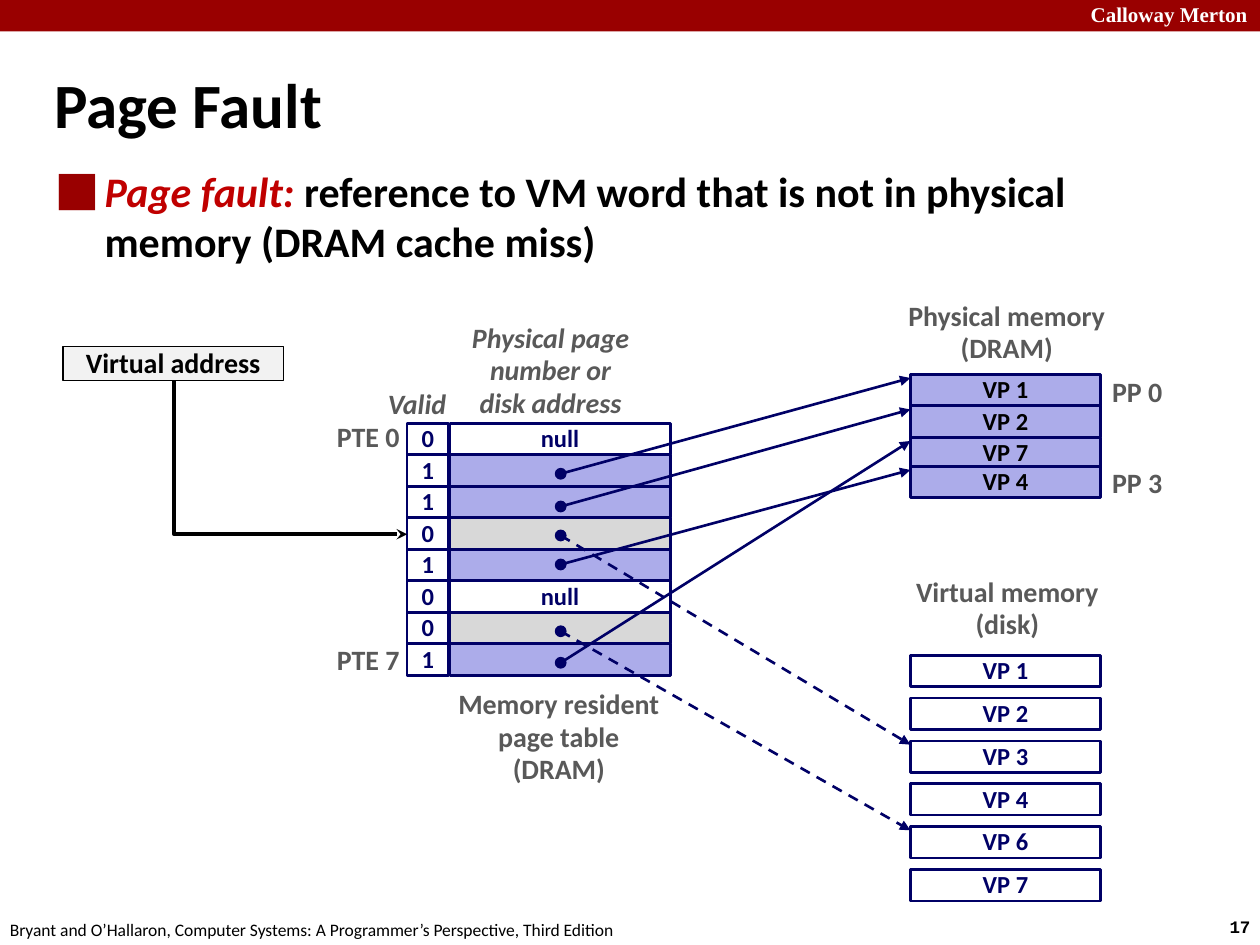
from dataclasses import dataclass

from lxml.etree import SubElement
from pptx import Presentation
from pptx.dml.color import RGBColor
from pptx.enum.dml import MSO_LINE
from pptx.enum.shapes import MSO_CONNECTOR, MSO_SHAPE
from pptx.enum.text import MSO_ANCHOR, MSO_AUTO_SIZE, PP_ALIGN
from pptx.oxml.ns import qn
from pptx.util import Inches, Pt

COLUMNS, ROWS = 40, 30
LEFT, CENTER, RIGHT = PP_ALIGN.LEFT, PP_ALIGN.CENTER, PP_ALIGN.RIGHT
TOP, MIDDLE = MSO_ANCHOR.TOP, MSO_ANCHOR.MIDDLE


@dataclass(frozen=True)
class Theme:
    banner: str = "990000"
    accent: str = "C00000"
    ink: str = "000000"
    navy: str = "000066"
    label: str = "595959"
    cached: str = "ACACEA"
    uncached: str = "D8D8D8"
    box: str = "F2F2F2"
    white: str = "FFFFFF"
    font: str = "Calibri"
    title_size: int = 36
    body_size: int = 24
    label_size: int = 16
    cell_size: int = 14
    header_size: int = 12
    footer_size: int = 10


class SlideBuilder:
    """Draws on one slide; positions are grid columns and rows."""

    def __init__(self, presentation, theme):
        self.theme = theme
        self.slide = presentation.slides.add_slide(presentation.slide_layouts[1])
        self.column = presentation.slide_width / COLUMNS
        self.row = presentation.slide_height / ROWS

    def place(self, *lengths):
        units = (self.column, self.row) * 2
        return [round(length * unit) for length, unit in zip(lengths, units)]

    def add_run(self, paragraph, text, size, color, **formats):
        run = paragraph.add_run()
        run.text = text
        values = {"name": self.theme.font, "bold": True, "size": Pt(size)} | formats
        for name, value in values.items():
            setattr(run.font, name, value)
        run.font.color.rgb = RGBColor.from_string(color)

    def add_lines(self, shape, lines, size, color, align=CENTER, anchor=MIDDLE, **formats):
        frame = shape.text_frame
        margin = 0 if align == CENTER else Inches(0.1)
        values = {"word_wrap": True, "vertical_anchor": anchor,
                  "margin_left": margin, "margin_right": margin}
        for name, value in values.items():
            setattr(frame, name, value)
        for index, line in enumerate(lines):
            paragraph = frame.add_paragraph() if index else frame.paragraphs[0]
            paragraph.alignment = align
            paragraph.line_spacing = 0.98
            self.add_run(paragraph, line, size, color, **formats)

    def label(self, area, *lines, size=None, color=None, **options):
        shape = self.slide.shapes.add_textbox(*self.place(*area))
        self.add_lines(shape, lines, size or self.theme.label_size,
                       color or self.theme.label, **options)

    def shape(self, area, fill, line=None, width=1.5, kind=MSO_SHAPE.RECTANGLE):
        shape = self.slide.shapes.add_shape(kind, *self.place(*area))
        shape.shadow.inherit = False
        shape.fill.solid()
        shape.fill.fore_color.rgb = RGBColor.from_string(fill)
        if line:
            shape.line.color.rgb = RGBColor.from_string(line)
            shape.line.width = Pt(width)
        else:
            shape.line.fill.background()
        return shape

    def cell(self, area, text, fill, color=None):
        shape = self.shape(area, fill, self.theme.navy)
        if text:
            self.add_lines(shape, [text], self.theme.cell_size, color or self.theme.navy)

    def dot(self, column, row):
        self.shape((column - 0.16, row - 0.16, 0.32, 0.32), self.theme.navy,
                   self.theme.navy, 1, MSO_SHAPE.OVAL)

    def arrow(self, start, end, color, width=1.5, head="triangle", dashed=False):
        connector = self.slide.shapes.add_connector(
            MSO_CONNECTOR.STRAIGHT, *self.place(*start, *end))
        connector.line.color.rgb = RGBColor.from_string(color)
        connector.line.width = Pt(width)
        if dashed:
            connector.line.dash_style = MSO_LINE.DASH
        properties = connector.element.spPr
        SubElement(properties.find(qn("a:ln")), qn("a:tailEnd"), type=head)
        SubElement(properties, qn("a:effectLst"))
        return connector

    def elbow_arrow(self, start, end, color):
        """Goes down, then right: a one-bend connector turned by 270 degrees."""
        middle_x, middle_y = ((a + b) / 2 for a, b in zip(start, end))
        half_x, half_y = ((b - a) / 2 for a, b in zip(start, end))
        connector = self.arrow((middle_x + half_y, middle_y - half_x),
                               (middle_x - half_y, middle_y + half_x),
                               color, 2, "stealth")
        properties = connector.element.spPr
        properties.find(qn("a:xfrm")).set("rot", str(270 * 60000))
        properties.find(qn("a:prstGeom")).set("prst", "bentConnector2")

    def placeholder(self, shape, area, anchor):
        for name, value in zip(("left", "top", "width", "height"), self.place(*area)):
            setattr(shape, name, value)
        shape.text_frame.auto_size = MSO_AUTO_SIZE.NONE
        shape.text_frame.vertical_anchor = anchor
        paragraph = shape.text_frame.paragraphs[0]
        paragraph.alignment = LEFT
        paragraph.space_before = Pt(0)
        return paragraph

    def title(self, area, text):
        paragraph = self.placeholder(self.slide.shapes.title, area, MIDDLE)
        self.add_run(paragraph, text, self.theme.title_size, self.theme.ink)

    def bullet(self, area, term, text):
        theme = self.theme
        paragraph = self.placeholder(self.slide.placeholders[1], area, TOP)
        self.add_run(paragraph, term, theme.body_size, theme.accent, italic=True)
        self.add_run(paragraph, text, theme.body_size, theme.ink)
        properties = paragraph._p.get_or_add_pPr()
        properties.set("marL", str(Inches(0.38)))
        properties.set("indent", str(-Inches(0.38)))
        bullet_color = SubElement(properties, qn("a:buClr"))
        SubElement(bullet_color, qn("a:srgbClr"), val=theme.banner)
        SubElement(properties, qn("a:buChar"), char="⬛")


def main():
    presentation = Presentation()
    presentation.slide_width, presentation.slide_height = Inches(10), Inches(7.5)
    theme = Theme()
    builder = SlideBuilder(presentation, theme)

    # Banner, footer and page number
    builder.shape((0, 0, COLUMNS, 1), theme.banner)
    builder.label((32, -0.12, 8, 1.2), "Calloway Merton", size=theme.header_size,
                  color=theme.white, align=RIGHT, anchor=TOP, name="Times New Roman")
    builder.label((38.64, 28.92, 1.8, 1.08), "17", size=theme.footer_size,
                  color=theme.ink, align=LEFT, anchor=TOP, name="Courier New")
    builder.label((-0.08, 29, 20.32, 1.08), "Bryant and O’Hallaron, Computer Systems: "
                  "A Programmer’s Perspective, Third Edition", size=theme.footer_size,
                  color=theme.ink, align=LEFT, anchor=TOP, bold=False)

    # Title and definition
    builder.title((1.32, 1.56, 36.24, 3.44), "Page Fault")
    builder.bullet((1.4, 5.04, 36.36, 3.32), "Page fault: ",
                   "reference to VM word that is not in physical memory (DRAM cache miss)")

    # Physical memory and disk pages: name -> top row
    memory_left, page_width = 28.9, 6.04
    physical = {"VP 1": 11.88, "VP 2": 12.88, "VP 7": 13.88, "VP 4": 14.8}
    disk_names = ("VP 1", "VP 2", "VP 3", "VP 4", "VP 6", "VP 7")
    disk = {name: 20.8 + 1.36 * index for index, name in enumerate(disk_names)}
    for pages, fill, color in ((physical, theme.cached, theme.ink),
                               (disk, theme.white, theme.navy)):
        for name, top in pages.items():
            builder.cell((memory_left, top, page_width, 1), name, fill, color)

    # Page table: valid bit, page pointed to, row of the dot
    table_top, valid_left, address_left = 13.44, 12.92, 14.28
    dot_column = 17.8
    entries = [("0", None, None), ("1", "VP 1", 15.04), ("1", "VP 2", 16.08),
               ("0", "VP 3", 17), ("1", "VP 4", 17.92), ("0", None, None),
               ("0", "VP 6", 20.04), ("1", "VP 7", 21.04)]
    for index, (valid, page, _) in enumerate(entries):
        top = table_top + index
        cached = theme.cached if valid == "1" else theme.uncached
        builder.cell((valid_left, top, 1.32, 1), valid, theme.white)
        builder.cell((address_left, top, 7, 1), None if page else "null",
                     cached if page else theme.white)

    # Pointers: solid to memory, dashed to disk
    for valid, page, dot_row in entries:
        if page:
            target = (physical if valid == "1" else disk)[page] + 0.12
            builder.arrow((dot_column, dot_row), (memory_left, target),
                          theme.navy, dashed=valid == "0")
            builder.dot(dot_column, dot_row)

    # Virtual address and the entry it selects
    address = builder.shape((2, 11, 7, 1.08), theme.box, theme.ink, 1)
    builder.add_lines(address, ["Virtual address"], theme.label_size, theme.ink)
    builder.elbow_arrow((5.52, 12.08), (valid_left, 16.96), theme.ink)

    # Labels
    builder.label((11.92, 12.12, 3, 1.48), "Valid", align=LEFT, anchor=TOP, italic=True)
    builder.label((14.56, 10, 5.84, 3.56), "Physical page", "number or", "disk address",
                  italic=True)
    builder.label((14.04, 21.64, 7.4, 3.56), "Memory resident", "page table", "(DRAM)",
                  anchor=TOP)
    builder.label((28.4, 9.32, 7.12, 2.52), "Physical memory", "(DRAM)", anchor=TOP)
    builder.label((28.6, 18.08, 6.76, 2.52), "Virtual memory", "(disk)", anchor=TOP)
    for text, top in (("PTE 0", 13.16), ("PTE 7", 20.24)):
        builder.label((10.28, top, 2.8, 1.48), text, align=RIGHT)
    for text, top in (("PP 0", 11.72), ("PP 3", 14.6)):
        builder.label((34.9, top, 2.4, 1.48), text)

    presentation.save("out.pptx")


if __name__ == "__main__":
    main()
